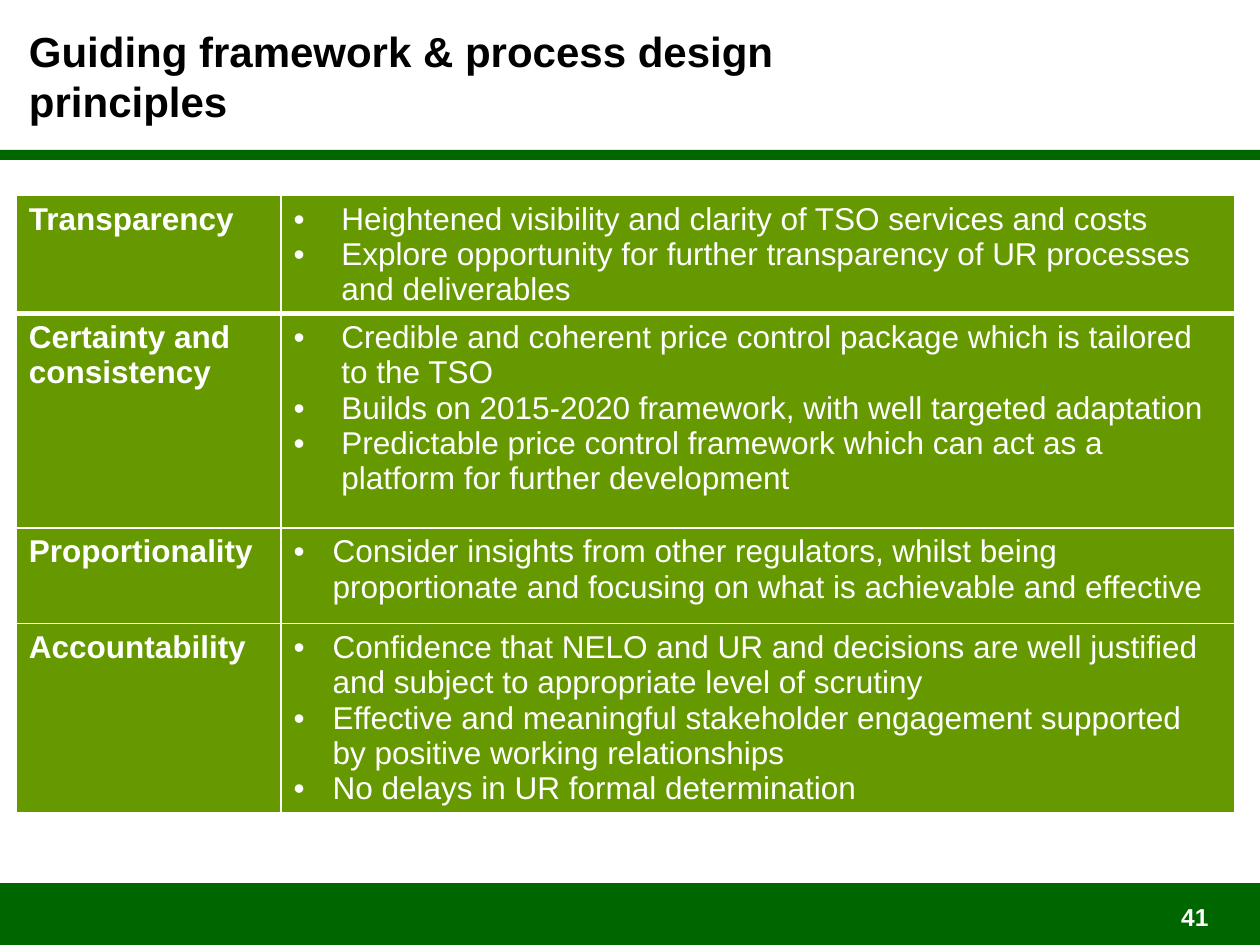
from lxml import etree
from pptx import Presentation
from pptx.dml.color import RGBColor
from pptx.enum.shapes import MSO_SHAPE
from pptx.enum.text import MSO_ANCHOR, MSO_AUTO_SIZE, PP_ALIGN
from pptx.oxml.ns import qn
from pptx.util import Inches, Pt

RECT = MSO_SHAPE.RECTANGLE
MIDDLE = MSO_ANCHOR.MIDDLE
FIXED = MSO_AUTO_SIZE.NONE
LEFT, RIGHT = PP_ALIGN.LEFT, PP_ALIGN.RIGHT

BLACK = RGBColor(0x00, 0x00, 0x00)
WHITE = RGBColor(0xFF, 0xFF, 0xFF)
GREEN = RGBColor(0x00, 0x66, 0x00)
OLIVE = RGBColor(0x66, 0x99, 0x00)

WIDE, WIDTHS, HEIGHTS = 0.38, (21, 75.7), (9.3, 17, 7.6, 14.9)
SLIM = 0.31
ROWS = [
    ("Transparency", WIDE, [
        "Heightened visibility and clarity of TSO services and costs",
        "Explore opportunity for further transparency of UR processes and deliverables",
    ]),
    ("Certainty and consistency", WIDE, [
        "Credible and coherent price control package which is tailored to the TSO",
        "Builds on 2015-2020 framework, with well targeted adaptation",
        "Predictable price control framework which can act as a platform for further development",
    ]),
    ("Proportionality", SLIM, [
        "Consider insights from other regulators, whilst being proportionate and focusing on what is achievable and effective",
    ]),
    ("Accountability", SLIM, [
        "Confidence that NELO and UR and decisions are well justified and subject to appropriate level of scrutiny",
        "Effective and meaningful stakeholder engagement supported by positive working relationships",
        "No delays in UR formal determination",
    ]),
]


class Deck:
    font = "Arial"
    cols, rows = 100, 75

    def __init__(self):
        self.prs = Presentation()
        self.prs.slide_width, self.prs.slide_height = Inches(10), Inches(7.5)
        self.slide = self.prs.slides.add_slide(self.prs.slide_layouts[5])

    def x(self, n):
        return round(self.prs.slide_width * n / self.cols)

    def y(self, n):
        return round(self.prs.slide_height * n / self.rows)

    def box(self, left, top, width, height):
        return self.x(left), self.y(top), self.x(width), self.y(height)

    def run(self, para, text, size, color, bold):
        run = para.add_run()
        run.text = text
        font = run.font
        font.name, font.size, font.bold = self.font, Pt(size), bold
        font.color.rgb = color

    def title(self, text, *place):
        shape = self.slide.shapes.title
        shape.left, shape.top, shape.width, shape.height = self.box(*place)
        frame = shape.text_frame
        frame.word_wrap, frame.auto_size = True, FIXED
        frame.vertical_anchor = MIDDLE
        para = frame.paragraphs[0]
        para.alignment = LEFT
        self.run(para, text, 24, BLACK, True)

    def bar(self, *place):
        shape = self.slide.shapes.add_shape(RECT, *self.box(*place))
        shape.shadow.inherit = False
        shape.fill.solid()
        shape.fill.fore_color.rgb = GREEN
        shape.line.fill.background()

    def number(self, text, *place):
        frame = self.slide.shapes.add_textbox(*self.box(*place)).text_frame
        frame.word_wrap = True
        para = frame.paragraphs[0]
        para.alignment = RIGHT
        self.run(para, text, 14, WHITE, True)

    def bullet(self, para, indent):
        props = para._p.get_or_add_pPr()
        props.set("marL", str(Inches(indent)))
        props.set("indent", str(-Inches(indent)))
        etree.SubElement(props, qn("a:buFont")).set("typeface", self.font)
        etree.SubElement(props, qn("a:buChar")).set("char", "•")

    def cell(self, cell, top, base):
        props = cell._tc.get_or_add_tcPr()
        for side, width in (("L", 1), ("R", 1), ("T", top), ("B", base)):
            line = etree.SubElement(props, qn("a:ln" + side), w=str(Pt(width)))
            fill = etree.SubElement(line, qn("a:solidFill"))
            etree.SubElement(fill, qn("a:srgbClr")).set("val", str(WHITE))
        cell.fill.solid()
        cell.fill.fore_color.rgb = OLIVE

    def table(self, rows, widths, heights, left, top):
        place = self.box(left, top, sum(widths), sum(heights))
        table = self.slide.shapes.add_table(len(rows), len(widths), *place).table
        table.first_row = table.horz_banding = False
        for col, width in zip(table.columns, widths):
            col.width = self.x(width)
        for i, (name, indent, points) in enumerate(rows):
            table.rows[i].height = self.y(heights[i])
            head, body = table.cell(i, 0), table.cell(i, 1)
            for cell in (head, body):
                self.cell(cell, 3 if i == 1 else 1, 3 if i == 0 else 1)
            self.run(head.text_frame.paragraphs[0], name, 18, WHITE, True)
            frame = body.text_frame
            for j, point in enumerate(points):
                para = frame.add_paragraph() if j else frame.paragraphs[0]
                self.bullet(para, indent)
                self.run(para, point, 18, WHITE, False)


def main():
    deck = Deck()
    deck.bar(0, 70.1, 100, 4.9)
    deck.bar(0, 11.9, 100, 0.8)
    deck.title("Guiding framework & process design principles", 1.3, 2.9, 71.1, 6.2)
    deck.table(ROWS, WIDTHS, HEIGHTS, 1.3, 15.5)
    deck.number("41", 73.6, 71.1, 23.3, 5.2)
    deck.prs.save("out.pptx")


if __name__ == "__main__":
    main()
